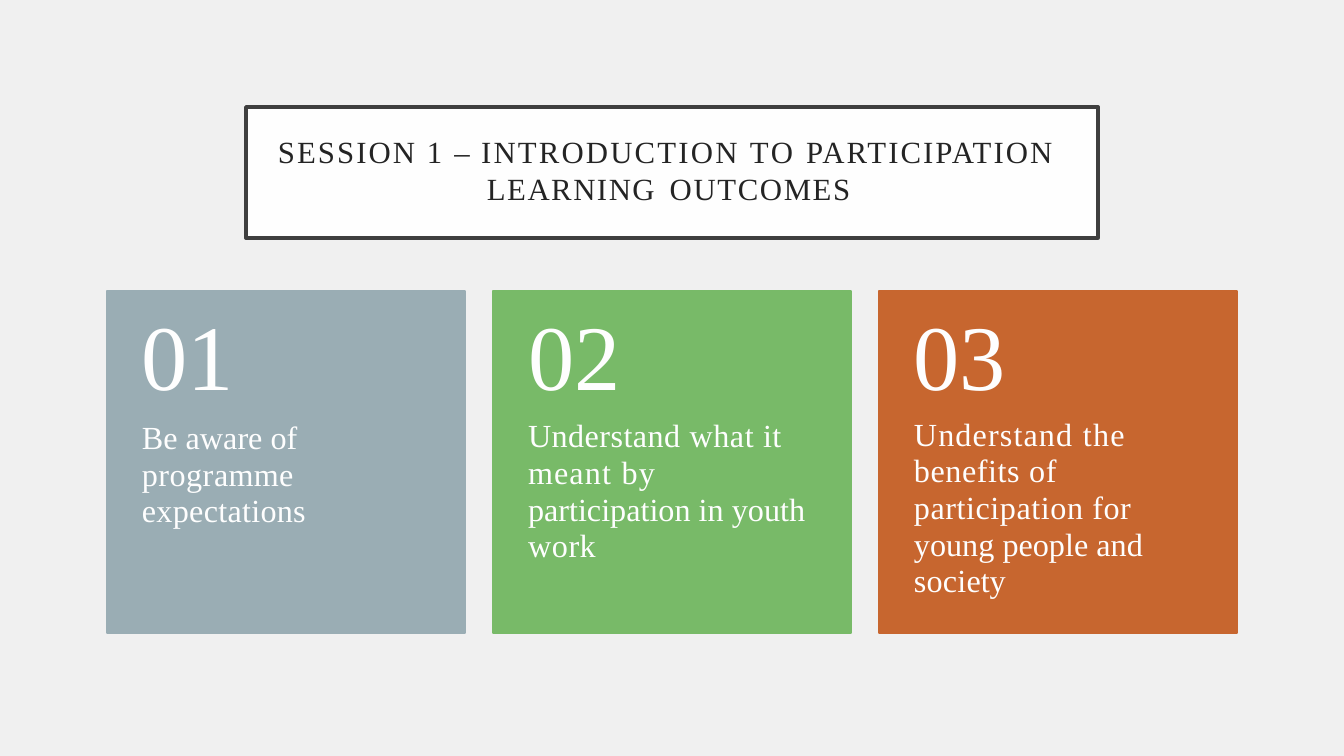
from dataclasses import dataclass

from pptx import Presentation
from pptx.dml.color import RGBColor
from pptx.enum.shapes import MSO_SHAPE
from pptx.enum.text import MSO_ANCHOR
from pptx.util import Emu, Pt

RECTANGLE = MSO_SHAPE.RECTANGLE
TOP = MSO_ANCHOR.TOP

EMU_PER_PX = 914400 / 100.8
FONT_NAME = "Times New Roman"
DARK, WHITE = "242424", "FEFEFE"

CARD_LEFT, CARD_TOP, CARD_WIDTH, CARD_HEIGHT = 107, 291, 358, 342
CARD_STEP = 386
CARD_PADDING = 35
CARD_TEXT_TOP = 298

# A run is its text and its letter spacing in points
Run = tuple[str, float]


@dataclass
class Line:
    runs: list[Run]
    size: int
    colour: str
    format: dict
    indent: int = 0


@dataclass
class Card:
    number: str
    colour: str
    text_width: int
    text_height: int
    gap: float
    outcome: list[Run]


TITLE = [
    Line([("SESSION 1 ", 1.5), ("– ", 1.3), ("INTRODUCTION ", 1.6), ("TO ", 1.9),
          ("PARTICIPATION", 1.5)], 22, DARK, {}),
    Line([("LEARNING", 1.1), (" ", 4), ("OUTCOMES", 1.2)], 22, DARK, {}, indent=209),
]

CARDS = [
    Card("01", "9AADB4", 167, 233, 8.1,
         [("Be aware of ", 0), ("progr", 0.3), ("amme expectations", 0.2)]),
    Card("02", "78BA68", 288, 269, 6.8,
         [("Understand ", 0.3), ("what ", 0.4), ("it ", 0.2), ("meant ", 0.8), ("by ", 0.9),
          ("participation in youth ", 0), ("wo", 0.4), ("rk", 0.3)]),
    Card("03", "C7662F", 239, 304, 5.7,
         [("Understand ", 0.8), ("the ", 0.9), ("benefits ", 0.4), ("of ", 0.6),
          ("participation for ", 0.4), ("young people and ", 0), ("soci", 0.1), ("ety", 0)]),
]


def px(length: int) -> Emu:
    return Emu(round(length * EMU_PER_PX))


def colour(value: str) -> RGBColor:
    return RGBColor.from_string(value)


def set_values(target, values: dict) -> None:
    for name, value in values.items():
        setattr(target, name, value)


def add_panel(slide, left: int, top: int, width: int, height: int,
              fill: str, line: str, line_width: float) -> None:
    shape = slide.shapes.add_shape(RECTANGLE, px(left), px(top), px(width), px(height))
    shape.shadow.inherit = False
    shape.fill.solid()
    shape.fill.fore_color.rgb = colour(fill)
    shape.line.color.rgb = colour(line)
    shape.line.width = Pt(line_width)


def add_text(slide, left: int, top: int, width: int, height: int, lines: list[Line]) -> None:
    text_box = slide.shapes.add_textbox(px(left), px(top), px(width), px(height))
    frame = text_box.text_frame
    set_values(frame, {"word_wrap": True, "vertical_anchor": TOP, "margin_left": 0,
                       "margin_top": 0, "margin_right": 0, "margin_bottom": 0})
    for index, line in enumerate(lines):
        paragraph = frame.add_paragraph() if index else frame.paragraphs[0]
        set_values(paragraph, line.format)
        if line.indent:
            properties = paragraph._p.get_or_add_pPr()
            properties.set("marL", "0")
            properties.set("indent", str(px(line.indent)))
        for text, spacing in line.runs:
            run = paragraph.add_run()
            run.text = text
            set_values(run.font, {"name": FONT_NAME, "size": Pt(line.size)})
            run.font.color.rgb = colour(line.colour)
            run._r.get_or_add_rPr().set("spc", str(round(spacing * 100)))


def add_card(slide, left: int, card: Card) -> None:
    add_panel(slide, left, CARD_TOP, CARD_WIDTH, CARD_HEIGHT, card.colour, card.colour, 1)
    outcome_format = {"space_before": Pt(card.gap), "line_spacing": 0.95}
    add_text(slide, left + CARD_PADDING, CARD_TEXT_TOP, card.text_width, card.text_height, [
        Line([(card.number, -0.1)], 66, WHITE, {}),
        Line(card.outcome, 23, WHITE, outcome_format),
    ])


def main() -> None:
    presentation = Presentation()
    presentation.slide_width = px(1344)
    presentation.slide_height = px(756)
    slide = presentation.slides.add_slide(presentation.slide_layouts[6])
    slide.background.fill.solid()
    slide.background.fill.fore_color.rgb = colour("F0F0F0")

    # Framed title
    add_panel(slide, 246, 107, 852, 131, "FEFEFE", "3F3F3F", 2.5)
    add_text(slide, 278, 133, 786, 74, TITLE)

    # Learning outcome cards
    for index, card in enumerate(CARDS):
        add_card(slide, CARD_LEFT + index * CARD_STEP, card)

    presentation.save("out.pptx")


if __name__ == "__main__":
    main()
